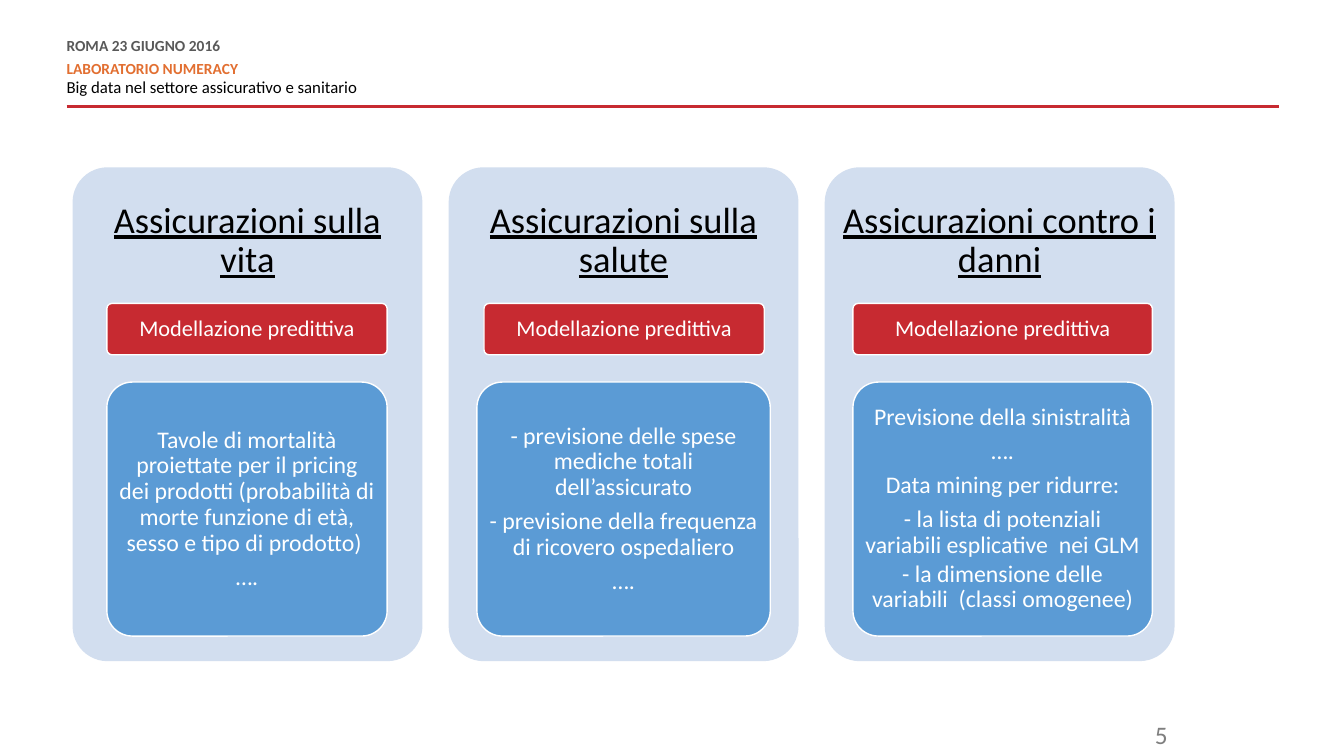
from dataclasses import dataclass

from lxml import etree
from pptx import Presentation
from pptx.dml.color import RGBColor
from pptx.enum.shapes import MSO_CONNECTOR as CONN, MSO_SHAPE as SHAPE
from pptx.enum.text import MSO_ANCHOR as ANCHOR, MSO_AUTO_SIZE as AUTO, PP_ALIGN as ALIGN
from pptx.oxml.ns import qn
from pptx.shapes.autoshape import Shape
from pptx.slide import Slide
from pptx.text.text import TextFrame
from pptx.util import Inches, Pt

FONT = "Calibri"
COLORS = {
    "red": "C72A31", "orange": "E26F31", "blue": "5B9BD5", "pale": "D2DEEF",
    "white": "FFFFFF", "black": "000000", "dark": "595959", "gray": "7F7F7F",
}
CARD_LEFT, CARD_STEP, CARD_TOP, CARD_W, CARD_H = 0.72, 3.73, 1.66, 3.47, 4.9
MODEL_TOP, MODEL_H = 3.01, 0.51
DETAIL_TOP, DETAIL_H = 3.79, 2.52


@dataclass
class HeaderLine:
    text: str
    size: int
    color: str
    bold: bool
    before: int
    after: int


@dataclass
class Card:
    title: str
    model_x: float
    model_w: float
    detail_x: float
    detail_w: float
    details: list[str]
    tight: int = 0  # closing paragraphs set close together


HEADER = [
    HeaderLine("ROMA 23 GIUGNO 2016", 11, "dark", True, 0, 6),
    HeaderLine("LABORATORIO NUMERACY", 11, "orange", True, 0, 0),
    HeaderLine("Big data nel settore assicurativo e sanitario", 12, "black", False, 3, 6),
]
CARDS = [
    Card("Assicurazioni sulla vita", 0.34, 2.78, 0.34, 2.78, [
        "Tavole di mortalità proiettate per il pricing dei prodotti "
        "(probabilità di morte funzione di età, sesso e tipo di prodotto) ",
        "….",
    ]),
    Card("Assicurazioni sulla salute", 0.35, 2.78, 0.28, 2.91, [
        "- previsione delle spese mediche totali dell’assicurato",
        "- previsione della frequenza di ricovero ospedaliero",
        "….",
    ]),
    Card("Assicurazioni contro i danni", 0.28, 2.97, 0.28, 2.97, [
        "Previsione della sinistralità",
        "….",
        "Data mining per ridurre:",
        "- la lista di potenziali variabili esplicative  nei GLM ",
        "- la dimensione delle variabili  (classi omogenee)",
    ], tight=2),
]


def rgb(name: str) -> RGBColor:
    return RGBColor.from_string(COLORS[name])


def set_frame(tf: TextFrame, insets: tuple[float, ...], anchor: ANCHOR) -> None:
    tf.word_wrap = True
    tf.auto_size = AUTO.NONE
    tf.vertical_anchor = anchor
    tf.margin_left, tf.margin_top, tf.margin_right, tf.margin_bottom = map(Inches, insets)


def write(tf: TextFrame, lines: list[str], size: int, color: str, align: ALIGN) -> None:
    tf.text = "\n".join(lines)
    for p in tf.paragraphs:
        p.alignment = align
        p.font.name, p.font.size = FONT, Pt(size)
        p.font.color.rgb = rgb(color)


def add_box(s: Slide, at: tuple[float, ...], fill: str, outlined: bool, lines: list[str],
            size: int, color: str, insets: tuple[float, ...]) -> Shape:
    sp = s.shapes.add_shape(SHAPE.ROUNDED_RECTANGLE, *map(Inches, at))
    sp.adjustments[0] = 0.1
    sp.shadow.inherit = False
    sp.fill.solid()
    sp.fill.fore_color.rgb = rgb(fill)
    if outlined:
        sp.line.color.rgb = rgb("white")
        sp.line.width = Pt(1)
    else:
        sp.line.fill.background()
    set_frame(sp.text_frame, insets, ANCHOR.MIDDLE)
    write(sp.text_frame, lines, size, color, ALIGN.CENTER)
    for p in sp.text_frame.paragraphs:
        p.line_spacing = 0.9
        p.space_after = Pt(6)
    return sp


def add_header(s: Slide) -> None:
    rule = s.shapes.add_connector(CONN.STRAIGHT, Inches(0.66), Inches(1.06),
                                  Inches(12.69), Inches(1.06))
    rule.line.color.rgb = rgb("red")
    rule.line.width = Pt(2)
    etree.SubElement(rule.line._get_or_add_ln().getparent(), qn("a:effectLst"))

    title = s.shapes.title
    title.left, title.top, title.width, title.height = map(Inches, (0.66, 0.39, 8.34, 0.59))
    tf = title.text_frame
    set_frame(tf, (0, 0, 0, 0), ANCHOR.TOP)
    write(tf, [h.text for h in HEADER], 11, "black", ALIGN.LEFT)
    for p, h in zip(tf.paragraphs, HEADER):
        p.font.size, p.font.bold = Pt(h.size), h.bold
        p.font.color.rgb = rgb(h.color)
        p.line_spacing = Pt(10.8)
        p.space_before, p.space_after = Pt(h.before), Pt(h.after)


def add_card(s: Slide, card: Card, x: float) -> None:
    # The deep bottom inset keeps the heading in the top part of the card
    panel = add_box(s, (x, CARD_TOP, CARD_W, CARD_H), "pale", False, [card.title],
                    26, "black", (0.01, 0, 0.01, 3.43))
    panel.text_frame.paragraphs[0].font.underline = True
    add_box(s, (x + card.model_x, MODEL_TOP, card.model_w, MODEL_H), "red", True,
            ["Modellazione predittiva"], 16, "white", (0.04, 0.03, 0.04, 0.03))
    detail = add_box(s, (x + card.detail_x, DETAIL_TOP, card.detail_w, DETAIL_H), "blue", True,
                     card.details, 17, "white", (0.05, 0.04, 0.05, 0.04))
    for p in detail.text_frame.paragraphs[len(card.details) - card.tight:]:
        p.space_after = Pt(2)


def main() -> None:
    prs = Presentation()
    prs.slide_width, prs.slide_height = Inches(13.33), Inches(7.5)
    s = prs.slides.add_slide(prs.slide_layouts.get_by_name("Title Only"))

    # Header and rule
    add_header(s)

    # Three insurance cards
    for i, card in enumerate(CARDS):
        add_card(s, card, CARD_LEFT + i * CARD_STEP)

    # Page number
    number = s.shapes.add_textbox(*map(Inches, (10.5, 7.09, 1.18, 0.35)))
    set_frame(number.text_frame, (0.1, 0.05, 0.1, 0.05), ANCHOR.TOP)
    write(number.text_frame, ["5"], 18, "gray", ALIGN.RIGHT)

    prs.save("out.pptx")


if __name__ == "__main__":
    main()
